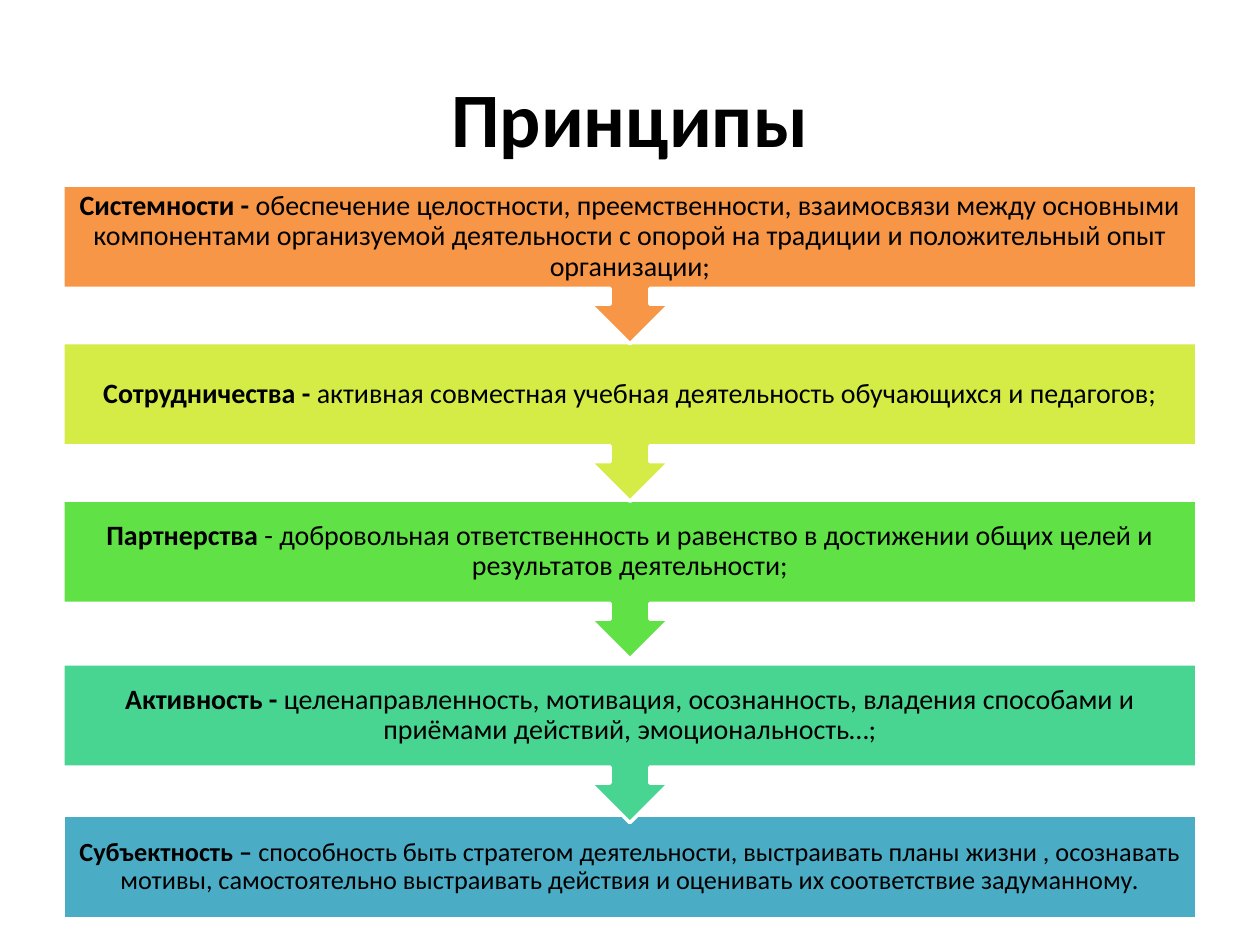
from pptx import Presentation
from pptx.dml.color import RGBColor
from pptx.enum.shapes import MSO_SHAPE
from pptx.enum.text import MSO_ANCHOR, PP_ALIGN
from pptx.util import Inches, Pt

TITLE = "Принципы"
# name, explanation, fill, top, type size
PRINCIPLES = [
    ("Системности -", " обеспечение целостности, преемственности, взаимосвязи между основными "
     "компонентами организуемой деятельности с опорой на традиции и положительный опыт организации;",
     "F79646", 1.47, 16),
    ("Сотрудничества - ", "активная совместная учебная деятельность обучающихся и педагогов;",
     "D5EC46", 2.72, 16),
    ("Партнерства ", "- добровольная ответственность и равенство в достижении общих целей и "
     "результатов деятельности;", "60E146", 3.97, 16),
    ("Активность - ", "целенаправленность, мотивация, осознанность, владения способами и "
     "приёмами действий, эмоциональность…;", "48D491", 5.27, 16),
    ("Субъектность – ", "способность быть стратегом деятельности, выстраивать планы жизни , "
     "осознавать мотивы, самостоятельно выстраивать действия и оценивать их соответствие "
     "задуманному.", "4BACC6", 6.47, 15),
]
THEME = {"font": "Calibri", "text": "000000", "outline": "FFFFFF", "title_size": 44}
LEFT, WIDTH = 0.5, 9
BAR_HEIGHT, CALLOUT_HEIGHT = 0.82, 1.26
INSET = 0.12


def write_spans(frame, spans, size):
    """Fill one centred paragraph with (text, bold) spans."""
    frame.word_wrap = True
    frame.vertical_anchor = MSO_ANCHOR.MIDDLE
    paragraph = frame.paragraphs[0]
    paragraph.alignment = PP_ALIGN.CENTER
    for text, bold in spans:
        span = paragraph.add_run()
        span.text = text
        span.font.name = THEME["font"]
        span.font.size = Pt(size)
        span.font.bold = bold
        span.font.color.rgb = RGBColor.from_string(THEME["text"])
    return paragraph


def add_principle(page, principle, is_last):
    name, explanation, fill, top, size = principle
    kind = MSO_SHAPE.RECTANGLE if is_last else MSO_SHAPE.DOWN_ARROW_CALLOUT
    height = BAR_HEIGHT if is_last else CALLOUT_HEIGHT
    bar = page.shapes.add_shape(kind, Inches(LEFT), Inches(top), Inches(WIDTH), Inches(height))
    bar.shadow.inherit = False
    bar.fill.solid()
    bar.fill.fore_color.rgb = RGBColor.from_string(fill)
    bar.line.color.rgb = RGBColor.from_string(THEME["outline"])
    bar.line.width = Pt(2)
    frame = bar.text_frame
    frame.margin_left = frame.margin_right = Inches(INSET)
    frame.margin_top = frame.margin_bottom = Inches(INSET)
    paragraph = write_spans(frame, [(name, True), (explanation, False)], size)
    paragraph.line_spacing = 0.9


def main():
    deck = Presentation()
    deck.slide_width, deck.slide_height = Inches(10), Inches(7.5)
    page = deck.slides.add_slide(deck.slide_layouts[6])

    title = page.shapes.add_textbox(Inches(LEFT), Inches(0.3), Inches(WIDTH), Inches(1.25))
    write_spans(title.text_frame, [(TITLE, True)], THEME["title_size"])

    # Bottom bar first, so that each arrow tip lies over the bar below it.
    for principle in reversed(PRINCIPLES):
        add_principle(page, principle, is_last=principle is PRINCIPLES[-1])

    deck.save("out.pptx")


if __name__ == "__main__":
    main()
